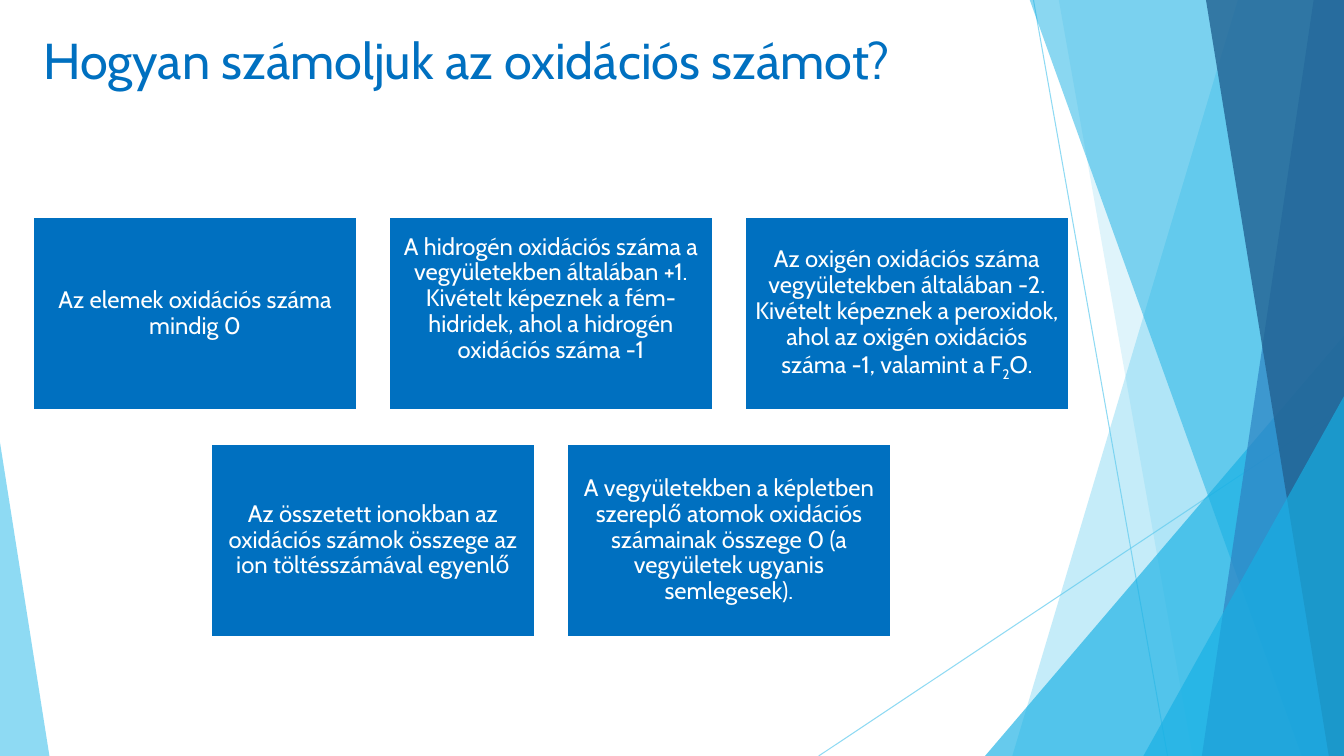
from dataclasses import dataclass

from lxml import etree
from pptx import Presentation
from pptx.dml.color import RGBColor
from pptx.enum.shapes import MSO_CONNECTOR, MSO_SHAPE
from pptx.enum.text import MSO_ANCHOR, PP_ALIGN
from pptx.oxml.ns import qn
from pptx.util import Inches, Pt

STRAIGHT = MSO_CONNECTOR.STRAIGHT
RECT, TRIANGLE = MSO_SHAPE.RECTANGLE, MSO_SHAPE.ISOSCELES_TRIANGLE
MIDDLE, TOP = MSO_ANCHOR.MIDDLE, MSO_ANCHOR.TOP
CENTER, LEFT = PP_ALIGN.CENTER, PP_ALIGN.LEFT


@dataclass(frozen=True)
class Theme:
    font: str = "Cabin"
    title_size: float = 36
    card_size: float = 17
    main: str = "0070C0"
    white: str = "FFFFFF"
    sky: str = "5FCBEF"
    cyan: str = "17B0E4"
    blue: str = "2E83C3"
    navy: str = "226292"


@dataclass(frozen=True)
class Ray:
    start: tuple[float, float]
    end: tuple[float, float]


@dataclass(frozen=True)
class Band:
    """Area between a slanted left edge and the right side of the slide."""
    top_x: float
    bottom_x: float
    color: str
    opacity: int


@dataclass(frozen=True)
class Wedge:
    """Right triangle standing on the bottom of the slide."""
    left: float
    top: float
    width: float
    apex: float
    color: str
    opacity: int


@dataclass(frozen=True)
class Card:
    texts: tuple[str, ...]  # every second text is a subscript
    bottom_inset: float = 0.07


T = Theme()
SLIDE_W, SLIDE_H = 13.33, 7.5
BAND_TOP = -0.01
INSET = 0.07
CARD_W, CARD_H = 3.21, 1.92
GAP_X, GAP_Y = 0.32, 0.33
GRID_LEFT, GRID_TOP, COLUMNS = 0.33, 2.15, 3

RAYS = [Ray((10.25, 0), (11.58, SLIDE_H)), Ray((SLIDE_W, 4.03), (8.12, SLIDE_H))]
FACETS = [
    Band(12.28, 10.04, T.sky, 36),
    Band(10.5, 11.83, T.sky, 20),
    Wedge(9.77, 3.33, 3.56, 1, T.cyan, 66),
    Band(10.21, 12.91, T.cyan, 50),
    Band(13.03, 11.92, T.blue, 70),
    Band(11.96, 13.18, T.navy, 80),
    Wedge(11.34, 3.93, 1.99, 1, T.cyan, 66),
    Wedge(0, 4.39, 0.49, 0, T.sky, 70),
]
CARD_ROWS = [
    [
        Card(("Az elemek oxidációs száma mindig 0",)),
        Card(("A hidrogén oxidációs száma a vegyületekben általában +1. Kivételt "
              "képeznek a fém-hidridek, ahol a hidrogén oxidációs száma -1",), 0.36),
        Card(("Az oxigén oxidációs száma vegyületekben általában -2. Kivételt képeznek "
              "a peroxidok, ahol az oxigén oxidációs száma -1, valamint a F", "2", "O.")),
    ],
    [
        Card(("Az összetett ionokban az oxidációs számok összege az ion "
              "töltésszámával egyenlő",)),
        Card(("A vegyületekben a képletben szereplő atomok oxidációs számainak "
              "összege 0 (a vegyületek ugyanis semlegesek).",)),
    ],
]


def rgb(color: str) -> RGBColor:
    return RGBColor.from_string(color)


def set_opacity(s, percent: int) -> None:
    for clr in s.element.spPr.iter(qn("a:srgbClr")):
        etree.SubElement(clr, qn("a:alpha")).set("val", str(percent * 1000))


def set_fill(s, color: str) -> None:
    s.shadow.inherit = False
    s.fill.solid()
    s.fill.fore_color.rgb = rgb(color)


def draw_ray(sp, ray: Ray) -> None:
    s = sp.add_connector(STRAIGHT, *map(Inches, ray.start + ray.end))
    s.line.color.rgb = rgb(T.sky)
    s.line.width = Pt(0.75)
    set_opacity(s, 70)
    etree.SubElement(s.element.spPr, qn("a:effectLst"))


def draw_facet(sp, facet: Band | Wedge) -> None:
    if isinstance(facet, Band):
        corners = [(SLIDE_W, BAND_TOP), (SLIDE_W, SLIDE_H), (facet.bottom_x, SLIDE_H)]
        builder = sp.build_freeform(Inches(facet.top_x), Inches(BAND_TOP))
        builder.add_line_segments([(Inches(x), Inches(y)) for x, y in corners])
        s = builder.convert_to_shape()
    else:
        box = (facet.left, facet.top, facet.width, SLIDE_H - facet.top)
        s = sp.add_shape(TRIANGLE, *map(Inches, box))
        s.adjustments[0] = facet.apex
    set_fill(s, facet.color)
    s.line.fill.background()
    set_opacity(s, facet.opacity)


def write_text(tf, texts: tuple[str, ...], size: float, color: str,
               frame: dict, para: dict) -> None:
    for name, value in frame.items():
        setattr(tf, name, value)
    p = tf.paragraphs[0]
    for name, value in para.items():
        setattr(p, name, value)
    for i, text in enumerate(texts):
        r = p.add_run()
        r.text = text
        for name, value in {"name": T.font, "size": Pt(size)}.items():
            setattr(r.font, name, value)
        r.font.color.rgb = rgb(color)
        if i % 2:
            r.font._element.set("baseline", "-25000")


def draw_card(sp, card: Card, left: float, top: float) -> None:
    s = sp.add_shape(RECT, *map(Inches, (left, top, CARD_W, CARD_H)))
    set_fill(s, T.main)
    s.line.color.rgb = rgb(T.white)
    s.line.width = Pt(1.5)
    frame = {"word_wrap": True, "vertical_anchor": MIDDLE,
             "margin_left": Inches(INSET), "margin_right": Inches(INSET),
             "margin_top": Inches(INSET), "margin_bottom": Inches(card.bottom_inset)}
    write_text(s.text_frame, card.texts, T.card_size, T.white, frame,
               {"alignment": CENTER, "line_spacing": 0.9})


def main() -> None:
    prs = Presentation()
    prs.slide_width, prs.slide_height = Inches(SLIDE_W), Inches(SLIDE_H)
    sp = prs.slides.add_slide(prs.slide_layouts[6]).shapes

    # Background rays and facets
    for ray in RAYS:
        draw_ray(sp, ray)
    for facet in FACETS:
        draw_facet(sp, facet)

    # Title
    title = sp.add_textbox(*map(Inches, (0.33, 0.24, 9.4, 1.44)))
    write_text(title.text_frame, ("Hogyan számoljuk az oxidációs számot?",),
               T.title_size, T.main, {"word_wrap": True, "vertical_anchor": TOP},
               {"alignment": LEFT})

    # Rule cards, each row centred on the full one
    pitch = CARD_W + GAP_X
    for i, row in enumerate(CARD_ROWS):
        left = GRID_LEFT + (COLUMNS - len(row)) * pitch / 2
        for j, card in enumerate(row):
            draw_card(sp, card, left + j * pitch, GRID_TOP + i * (CARD_H + GAP_Y))

    prs.save("out.pptx")


if __name__ == "__main__":
    main()
